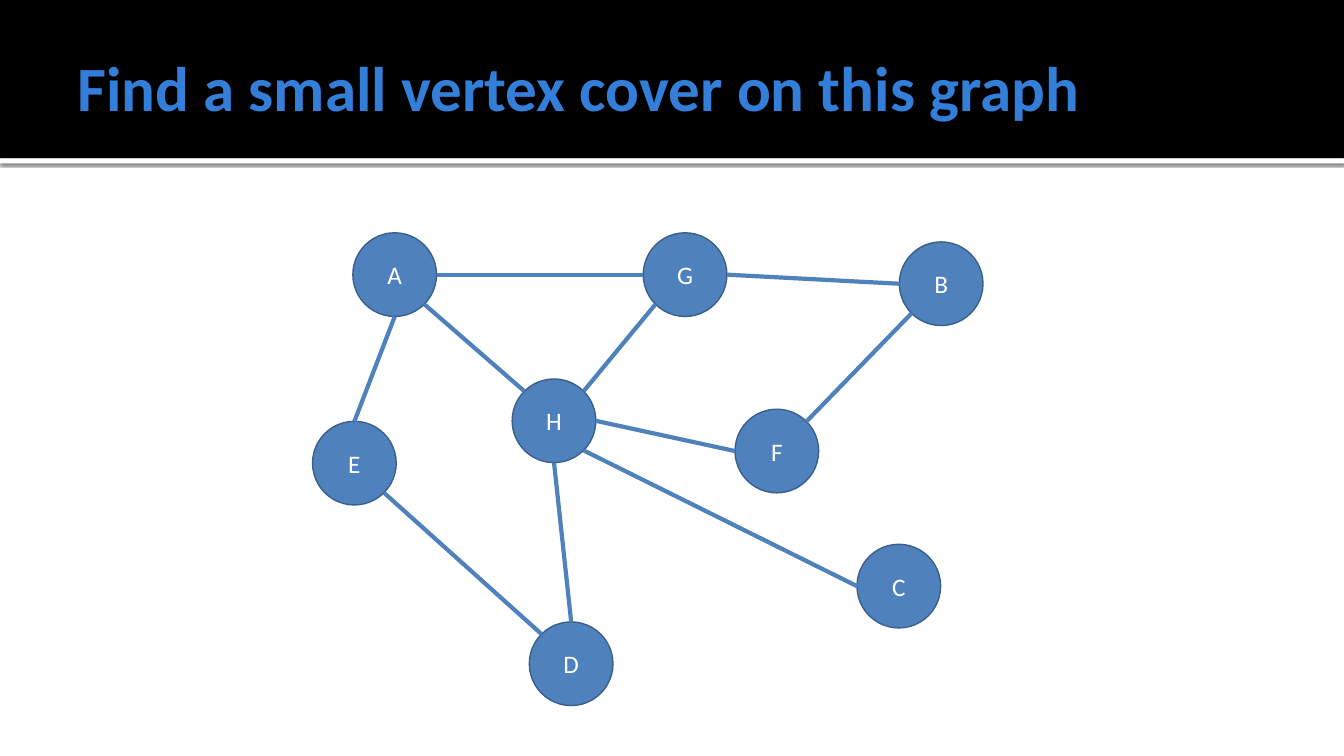
import math
from lxml import etree
from pptx import Presentation
from pptx.dml.color import RGBColor
from pptx.enum import shapes, text
from pptx.oxml import ns
from pptx.util import Inches, Pt

COLORS = {"black": "000000", "white": "FFFFFF", "title": "337ED9",
          "node": "4F81BD", "outline": "3A5F8C"}
DIAMETER = 0.83

# Left and top of each vertex
VERTICES = {"A": (3.5, 2.31), "H": (5.08, 3.76), "G": (6.38, 2.31), "F": (7.29, 4.06),
            "E": (3.1, 4.18), "D": (5.25, 6.17), "C": (8.5, 5.4), "B": (8.92, 2.4)}

# Connection sites run counterclockwise from the top in steps of 45 degrees
TOP, TOP_LEFT, LEFT, BOTTOM_LEFT, BOTTOM, BOTTOM_RIGHT, RIGHT, TOP_RIGHT = range(8)
EDGES = [("A", BOTTOM_RIGHT, "H", TOP_LEFT), ("A", RIGHT, "G", LEFT),
         ("A", BOTTOM, "E", TOP), ("E", BOTTOM_RIGHT, "D", TOP_LEFT),
         ("B", BOTTOM_LEFT, "F", TOP_RIGHT), ("H", BOTTOM, "D", TOP),
         ("H", BOTTOM_RIGHT, "C", LEFT), ("H", RIGHT, "F", LEFT),
         ("G", RIGHT, "B", LEFT), ("H", TOP_RIGHT, "G", BOTTOM_LEFT)]


def add_filled(kind, left, top, width, height, fill):
    shape = page.shapes.add_shape(kind, Inches(left), Inches(top), Inches(width), Inches(height))
    shape.fill.solid()
    shape.fill.fore_color.rgb = RGBColor.from_string(COLORS[fill])
    shape.line.fill.background()
    shape.shadow.inherit = False
    return shape


def site_point(vertex, site):
    left, top = VERTICES[vertex]
    radius = DIAMETER / 2
    angle = math.radians(45 * site)
    return (Inches(left + radius - radius * math.sin(angle)),
            Inches(top + radius - radius * math.cos(angle)))


deck = Presentation()
deck.slide_width, deck.slide_height = Inches(13.33), Inches(7.5)
page = deck.slides.add_slide(deck.slide_layouts[6])

# Header band with a shadowed white rule below it
rule = add_filled(shapes.MSO_SHAPE.RECTANGLE, 0, 1.57, 13.33, 0.05, "white")
effects = rule._element.spPr.find(ns.qn("a:effectLst"))
shadow = etree.SubElement(effects, ns.qn("a:outerShdw"), blurRad=str(Pt(2.5)),
                          dist=str(Pt(0.8)), dir="5400000", algn="tl", rotWithShape="0")
shade = etree.SubElement(shadow, ns.qn("a:srgbClr"), val=COLORS["black"])
etree.SubElement(shade, ns.qn("a:alpha"), val="60000")
add_filled(shapes.MSO_SHAPE.RECTANGLE, 0, 0, 13.33, 1.57, "black")

# Title
title = page.shapes.add_textbox(Inches(0.67), Inches(0.17), Inches(12), Inches(1.37))
frame = title.text_frame
frame.word_wrap = True
frame.vertical_anchor = text.MSO_ANCHOR.MIDDLE
frame.margin_left = Inches(0.1)
frame.margin_right = frame.margin_top = frame.margin_bottom = Inches(0.05)
frame.text = "Find a small vertex cover on this graph"
font = frame.paragraphs[0].runs[0].font
font.name, font.size, font.bold = "Calibri", Pt(45), True
font.color.rgb = RGBColor.from_string(COLORS["title"])

# Vertices
circles = {}
for name, (left, top) in VERTICES.items():
    circle = add_filled(shapes.MSO_SHAPE.OVAL, left, top, DIAMETER, DIAMETER, "node")
    circle.line.color.rgb = RGBColor.from_string(COLORS["outline"])
    circle.line.width = Pt(1)
    circle.text_frame.text = name
    circle.text_frame.vertical_anchor = text.MSO_ANCHOR.MIDDLE
    para = circle.text_frame.paragraphs[0]
    para.alignment = text.PP_ALIGN.CENTER
    font = para.runs[0].font
    font.name, font.size = "Calibri", Pt(18)
    font.color.rgb = RGBColor.from_string(COLORS["white"])
    circles[name] = circle

# Edges, attached to the vertices at both ends
for start, start_site, end, end_site in EDGES:
    edge = page.shapes.add_connector(shapes.MSO_CONNECTOR.STRAIGHT,
                                     *site_point(start, start_site), *site_point(end, end_site))
    edge.line.color.rgb = RGBColor.from_string(COLORS["node"])
    edge.line.width = Pt(3)
    etree.SubElement(edge._element.spPr, ns.qn("a:effectLst"))
    links = edge._element.nvCxnSpPr.cNvCxnSpPr
    for tag, vertex, site in (("a:stCxn", start, start_site), ("a:endCxn", end, end_site)):
        etree.SubElement(links, ns.qn(tag), id=str(circles[vertex].shape_id), idx=str(site))

deck.save("out.pptx")
